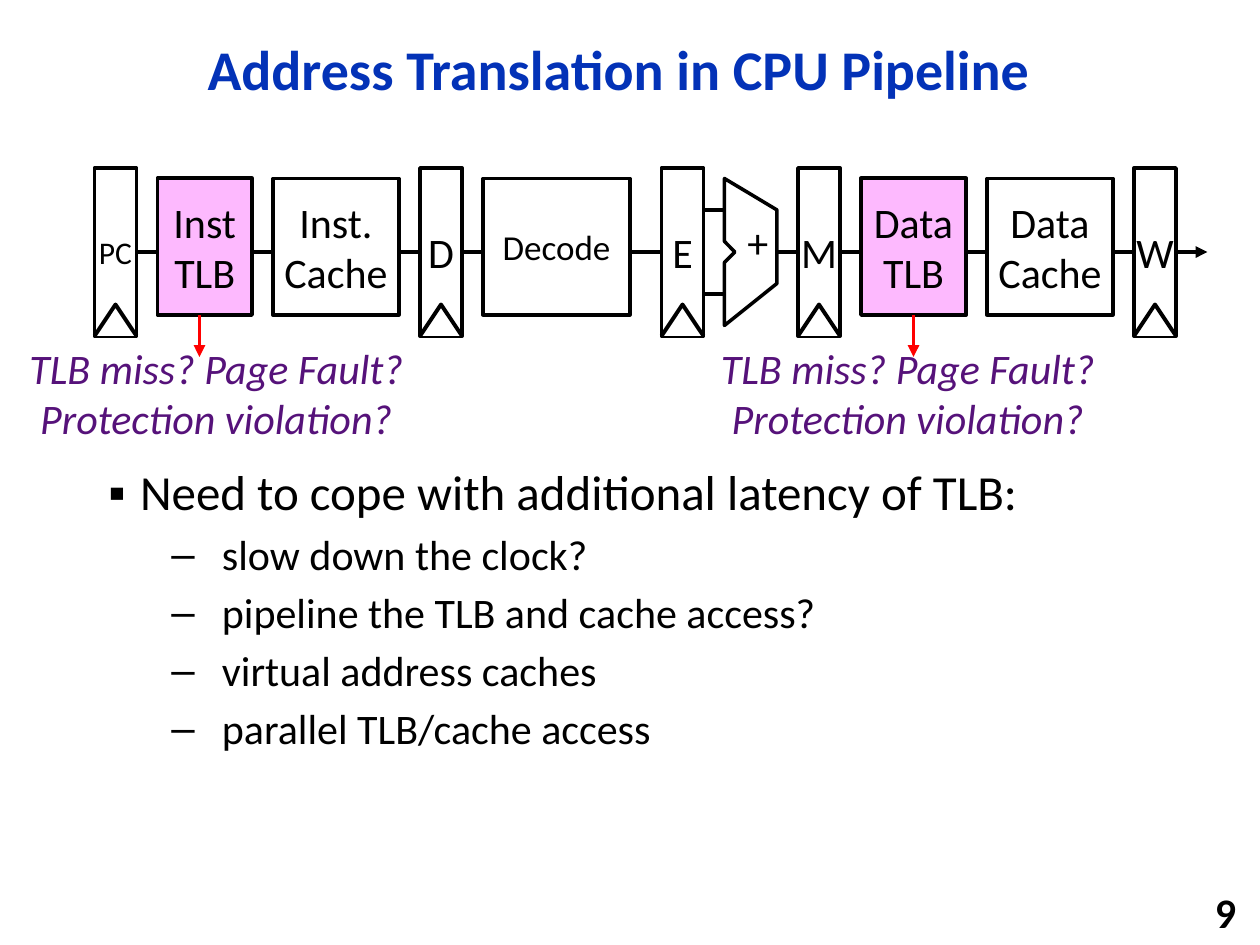
from lxml.etree import SubElement
from pptx import Presentation
from pptx.dml.color import RGBColor
from pptx.enum.shapes import MSO_CONNECTOR as Connector, MSO_SHAPE as Shape
from pptx.enum.text import MSO_ANCHOR as Anchor, MSO_AUTO_SIZE as AutoSize, PP_ALIGN as Align
from pptx.oxml.ns import qn
from pptx.util import Cm, Pt

BLACK = RGBColor(0x00, 0x00, 0x00)
WHITE = RGBColor(0xFF, 0xFF, 0xFF)
BLUE = RGBColor(0x03, 0x32, 0xB7)
PINK = RGBColor(0xFD, 0xB9, 0xFE)
RED = RGBColor(0xFF, 0x00, 0x00)
PURPLE = RGBColor(0x56, 0x12, 0x7A)
FONT = "Calibri"

# The pipeline sits on a grid of twelve units per inch
GRID = 2.54 / 12
REGISTER_TOP, REGISTER_WIDTH, REGISTER_HEIGHT = 16, 4, 16
BOX_TOP, BOX_HEIGHT = 17, 13
AXIS = REGISTER_TOP + REGISTER_HEIGHT / 2
TOP, LEFT, BOTTOM, RIGHT = range(4)

REGISTERS = [("PC", 9, 18), ("D", 40, 24), ("E", 63, 24), ("M", 76, 24), ("W", 108, 24)]
# label, left, width, fill, text size, line width
BOXES = [
    ("Inst TLB", 15, 9, PINK, 24, 2.25),
    ("Inst. Cache", 26, 12, WHITE, 24, 2),
    ("Decode", 46, 14, WHITE, 20, 2),
    ("Data TLB", 82, 10, PINK, 24, 2.25),
    ("Data Cache", 94, 12, WHITE, 24, 2),
]
ALU = [(69, 17), (69, 23), (70, 24), (69, 25), (69, 31), (74, 27), (74, 20)]
FAULTS = ["TLB miss? Page Fault?", "Protection violation?"]
REMEDIES = ["slow down the clock?", "pipeline the TLB and cache access?",
            "virtual address caches", "parallel TLB/cache access"]


def grid(units):
    return Cm(units * GRID)


def place(shape, left, top, width, height):
    shape.left, shape.top, shape.width, shape.height = left, top, width, height


def style(shape, fill, line_width):
    shape.shadow.inherit = False
    shape.fill.solid()
    shape.fill.fore_color.rgb = fill
    shape.line.color.rgb = BLACK
    shape.line.width = Pt(line_width)


def format_text(paragraph, size, color=BLACK, align=Align.CENTER, bold=False, italic=False):
    paragraph.alignment = align
    font = paragraph.font
    font.name, font.size, font.bold, font.italic = FONT, Pt(size), bold, italic
    font.color.rgb = color


def add_block(shapes, label, left, top, width, height, fill, size, line_width, wrap=True):
    block = shapes.add_shape(Shape.RECTANGLE, grid(left), grid(top), grid(width), grid(height))
    style(block, fill, line_width)
    frame = block.text_frame
    frame.margin_left = frame.margin_right = frame.margin_top = frame.margin_bottom = 0
    frame.vertical_anchor = Anchor.MIDDLE
    frame.word_wrap = wrap
    frame.text = label
    format_text(frame.paragraphs[0], size)
    return block


def add_outline(shapes, points, line_width, close):
    builder = shapes.build_freeform(*points[0], scale=float(grid(1)))
    builder.add_line_segments(points[1:], close=close)
    style(builder.convert_to_shape(), WHITE, line_width)


def add_register(slide, label, left, size):
    shapes = slide.shapes.add_group_shape().shapes
    register = add_block(shapes, label, left, REGISTER_TOP, REGISTER_WIDTH, REGISTER_HEIGHT,
                         WHITE, size, 2.25, wrap=False)
    base = REGISTER_TOP + REGISTER_HEIGHT
    clock_mark = [(left, base), (left + REGISTER_WIDTH / 2, base - 3),
                  (left + REGISTER_WIDTH, base)]
    add_outline(shapes, clock_mark, 2.25, close=False)
    return register


def add_wire(slide, x1, y1, x2, y2, color=BLACK, arrow=False):
    wire = slide.shapes.add_connector(Connector.STRAIGHT, grid(x1), grid(y1), grid(x2), grid(y2))
    wire.line.color.rgb = color
    wire.line.width = Pt(2.25)
    if arrow:
        SubElement(wire.line._get_or_add_ln(), qn("a:tailEnd"), type="triangle")
    SubElement(wire._element.spPr, qn("a:effectLst"))
    return wire


def add_label(slide, lines, left, top, width, height, wrap=False, **text_format):
    label = slide.shapes.add_textbox(left, top, width, height)
    frame = label.text_frame
    frame.word_wrap = wrap
    frame.vertical_anchor = Anchor.MIDDLE
    frame.text = "\n".join(lines)
    for paragraph in frame.paragraphs:
        format_text(paragraph, 24, **text_format)


def add_bullet(paragraph, text, level, size, bullet, margin, hanging):
    paragraph.text = text
    paragraph.level = level
    format_text(paragraph, size, align=Align.LEFT)
    paragraph.line_spacing = 0.9
    paragraph.space_before = Pt(size * 0.3)
    properties = paragraph._p.get_or_add_pPr()
    properties.set("marL", str(margin))
    properties.set("indent", str(-hanging))
    SubElement(properties, qn("a:buChar"), char=bullet)


def fill_title(slide):
    title = slide.shapes.title
    place(title, Cm(2.34), Cm(0.43), Cm(20.27), Cm(2.06))
    frame = title.text_frame
    frame.text = "Address Translation in CPU Pipeline"
    frame.auto_size = AutoSize.NONE
    frame.vertical_anchor = Anchor.MIDDLE
    format_text(frame.paragraphs[0], 32, BLUE, bold=True)
    frame.paragraphs[0].line_spacing = 0.9


def fill_body(slide):
    body = slide.placeholders[1]
    place(body, Cm(1.93), Cm(9.32), Cm(21.34), Cm(7.7))
    frame = body.text_frame
    frame.auto_size = AutoSize.NONE
    add_bullet(frame.paragraphs[0], "Need to cope with additional latency of TLB:",
               0, 28, "▪", Cm(0.64), Cm(0.64))
    for remedy in REMEDIES:
        add_bullet(frame.add_paragraph(), remedy, 1, 24, "–", Cm(2.29), Cm(1.02))


def draw_pipeline(slide):
    # Main wires, behind the stages
    add_wire(slide, 74, AXIS, 115, AXIS, arrow=True)
    fetch_wire = add_wire(slide, 13, AXIS, 63, AXIS)

    # Pipeline registers, stage boxes and the adder
    registers = {label: add_register(slide, label, left, size)
                 for label, left, size in REGISTERS}
    boxes = {label: add_block(slide.shapes, label, left, BOX_TOP, width, BOX_HEIGHT,
                              fill, size, line_width)
             for label, left, width, fill, size, line_width in BOXES}
    add_outline(slide.shapes, ALU, 2, close=True)
    add_label(slide, ["+"], Cm(14.81), Cm(4.24), Cm(0.94), Cm(1.27))
    fetch_wire.begin_connect(registers["PC"], RIGHT)
    fetch_wire.end_connect(registers["E"], LEFT)

    # Operand wires
    for y in (AXIS - 4, AXIS + 4):
        add_wire(slide, 67, y, 69, y)

    # Possible faults below each TLB
    exits = [add_wire(slide, x, 30, x, 34, RED, arrow=True) for x in (19, 87)]
    exits[1].begin_connect(boxes["Data TLB"], BOTTOM)
    for left in (0.18, 14.12):
        add_label(slide, FAULTS, Cm(left), Cm(6.76), Cm(8.36), Cm(2.31),
                  color=PURPLE, italic=True)


def main():
    deck = Presentation()
    deck.slide_width, deck.slide_height = Cm(25.4), Cm(19.05)
    slide = deck.slides.add_slide(deck.slide_layouts[1])
    fill_title(slide)
    fill_body(slide)
    # Page number
    add_label(slide, ["9"], Cm(19.89), Cm(17.98), Cm(5.28), Cm(0.81),
              wrap=True, align=Align.RIGHT, bold=True)
    draw_pipeline(slide)
    deck.save("out.pptx")


if __name__ == "__main__":
    main()
